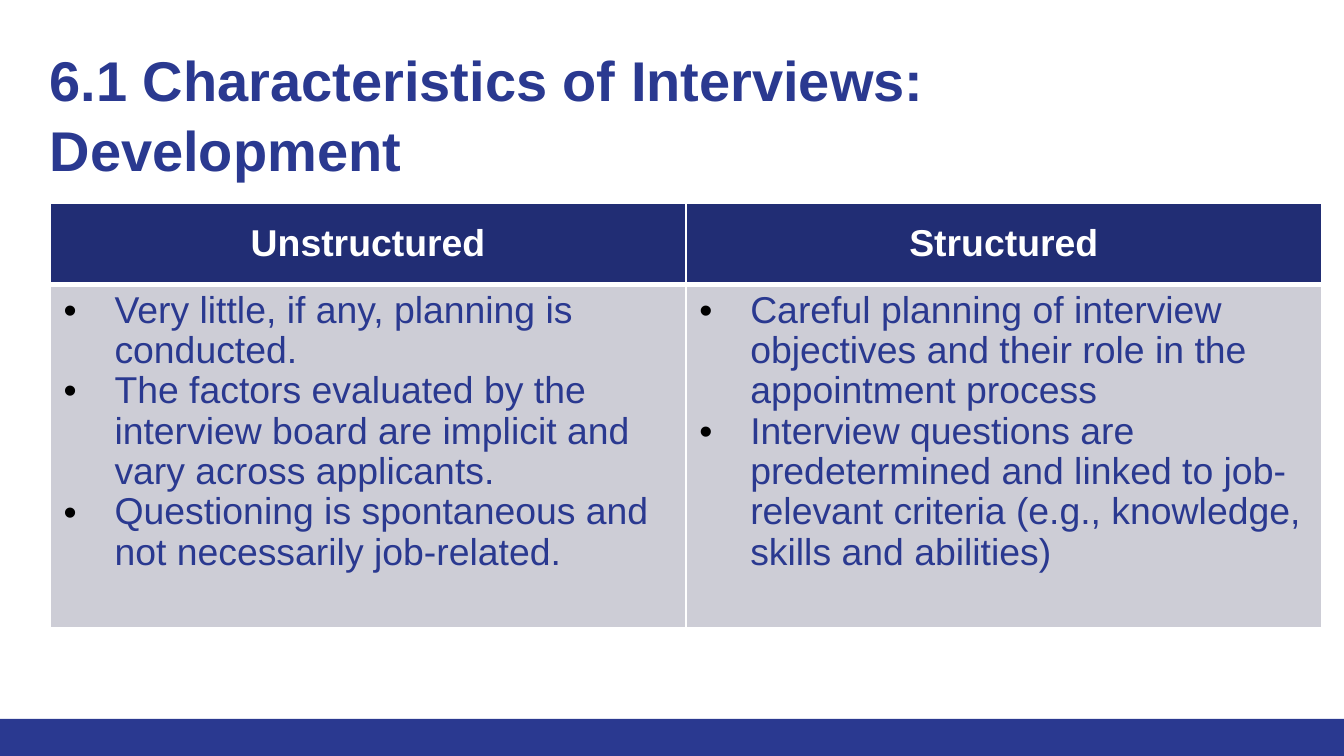
from dataclasses import dataclass

from lxml.etree import SubElement
from pptx import Presentation
from pptx.dml.color import RGBColor
from pptx.enum.shapes import MSO_SHAPE
from pptx.enum.text import MSO_ANCHOR, PP_ALIGN
from pptx.oxml.ns import qn
from pptx.util import Cm, Pt

TITLE = "6.1 Characteristics of Interviews: Development"
INTERVIEWS = {
    "Unstructured": [
        "Very little, if any, planning is conducted.",
        "The factors evaluated by the interview board are implicit and vary across applicants.",
        "Questioning is spontaneous and not necessarily job-related.",
    ],
    "Structured": [
        "Careful planning of interview objectives and their role in the appointment process",
        "Interview questions are predetermined and linked to job-relevant criteria "
        "(e.g., knowledge, skills and abilities)",
    ],
}


@dataclass(frozen=True)
class Theme:
    font: str = "Arial"
    blue: str = "2A3990"
    header: str = "212D74"
    body: str = "CDCDD6"
    white: str = "FFFFFF"
    bullet: str = "000000"
    title_size: int = 30
    table_size: int = 20


THEME = Theme()
SLIDE_WIDTH, SLIDE_HEIGHT = Cm(25.4), Cm(14.29)
FOOTER_HEIGHT = Cm(0.7)
TABLE_WIDTH = Cm(24.03)
ROW_HEIGHTS = Cm(1.53), Cm(6.5)
BULLET_INDENT = Cm(0.96)


def style(paragraph, size, color, bold, spacing):
    """Set the font and line spacing of a paragraph."""
    paragraph.line_spacing = spacing
    font = paragraph.font
    font.name, font.size, font.bold = THEME.font, Pt(size), bold
    font.color.rgb = RGBColor.from_string(color)


def add_bullet(paragraph):
    """Give a paragraph a hanging bullet."""
    properties = paragraph._p.get_or_add_pPr()
    properties.set("marL", str(BULLET_INDENT))
    properties.set("indent", str(-BULLET_INDENT))
    color = SubElement(properties, qn("a:buClr"))
    SubElement(color, qn("a:srgbClr"), val=THEME.bullet)
    SubElement(properties, qn("a:buFont"), typeface=THEME.font)
    SubElement(properties, qn("a:buChar"), char="•")


def paint_cell(cell, fill, bottom_width):
    """Draw white borders around a cell and fill it."""
    properties = cell._tc.get_or_add_tcPr()
    for side, width in (("L", 1), ("R", 1), ("T", 1), ("B", bottom_width)):
        border = SubElement(properties, qn(f"a:ln{side}"), w=str(Pt(width)))
        solid = SubElement(border, qn("a:solidFill"))
        SubElement(solid, qn("a:srgbClr"), val=THEME.white)
    cell.fill.solid()
    cell.fill.fore_color.rgb = RGBColor.from_string(fill)


def add_footer(slide):
    """Add the band along the bottom edge."""
    footer = slide.shapes.add_shape(
        MSO_SHAPE.RECTANGLE, 0, SLIDE_HEIGHT - FOOTER_HEIGHT, SLIDE_WIDTH, FOOTER_HEIGHT)
    footer.shadow.inherit = False
    footer.fill.solid()
    footer.fill.fore_color.rgb = RGBColor.from_string(THEME.blue)
    footer.line.fill.background()


def add_title(slide):
    """Add the heading."""
    heading = slide.shapes.add_textbox(Cm(0.69), Cm(0.56), Cm(23.37), Cm(2.26)).text_frame
    heading.word_wrap = True
    heading.margin_left = heading.margin_right = Cm(0.25)
    heading.margin_top = heading.margin_bottom = Cm(0.25)
    heading.text = TITLE
    style(heading.paragraphs[0], THEME.title_size, THEME.blue, True, 1.04)


def add_comparison(slide):
    """Add the table with one column per interview type."""
    comparison = slide.shapes.add_table(
        len(ROW_HEIGHTS), len(INTERVIEWS), Cm(0.95), Cm(3.84),
        TABLE_WIDTH, sum(ROW_HEIGHTS)).table
    for row, height in zip(comparison.rows, ROW_HEIGHTS):
        row.height = height
    for column, (kind, traits) in enumerate(INTERVIEWS.items()):
        header, body = comparison.cell(0, column), comparison.cell(1, column)
        paint_cell(header, THEME.header, 3)
        paint_cell(body, THEME.body, 1)
        header.text = kind
        header.vertical_anchor = MSO_ANCHOR.MIDDLE
        label = header.text_frame.paragraphs[0]
        label.alignment = PP_ALIGN.CENTER
        style(label, THEME.table_size, THEME.white, True, 1.0)
        body.text = "\n".join(traits)
        for trait in body.text_frame.paragraphs:
            style(trait, THEME.table_size, THEME.blue, False, 0.97)
            add_bullet(trait)


def main():
    """Build the slide and save it."""
    presentation = Presentation()
    presentation.slide_width, presentation.slide_height = SLIDE_WIDTH, SLIDE_HEIGHT
    slide = presentation.slides.add_slide(presentation.slide_layouts[6])
    add_footer(slide)
    add_title(slide)
    add_comparison(slide)
    presentation.save("out.pptx")


if __name__ == "__main__":
    main()
